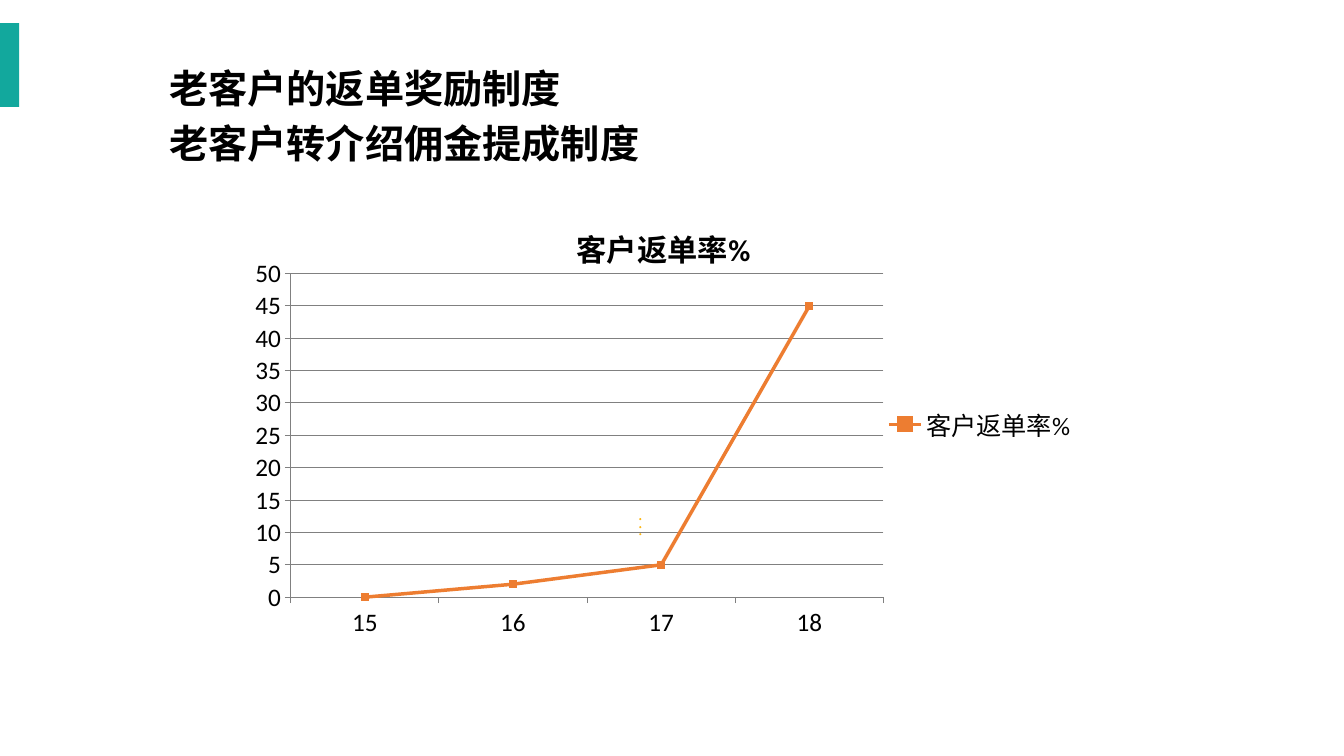
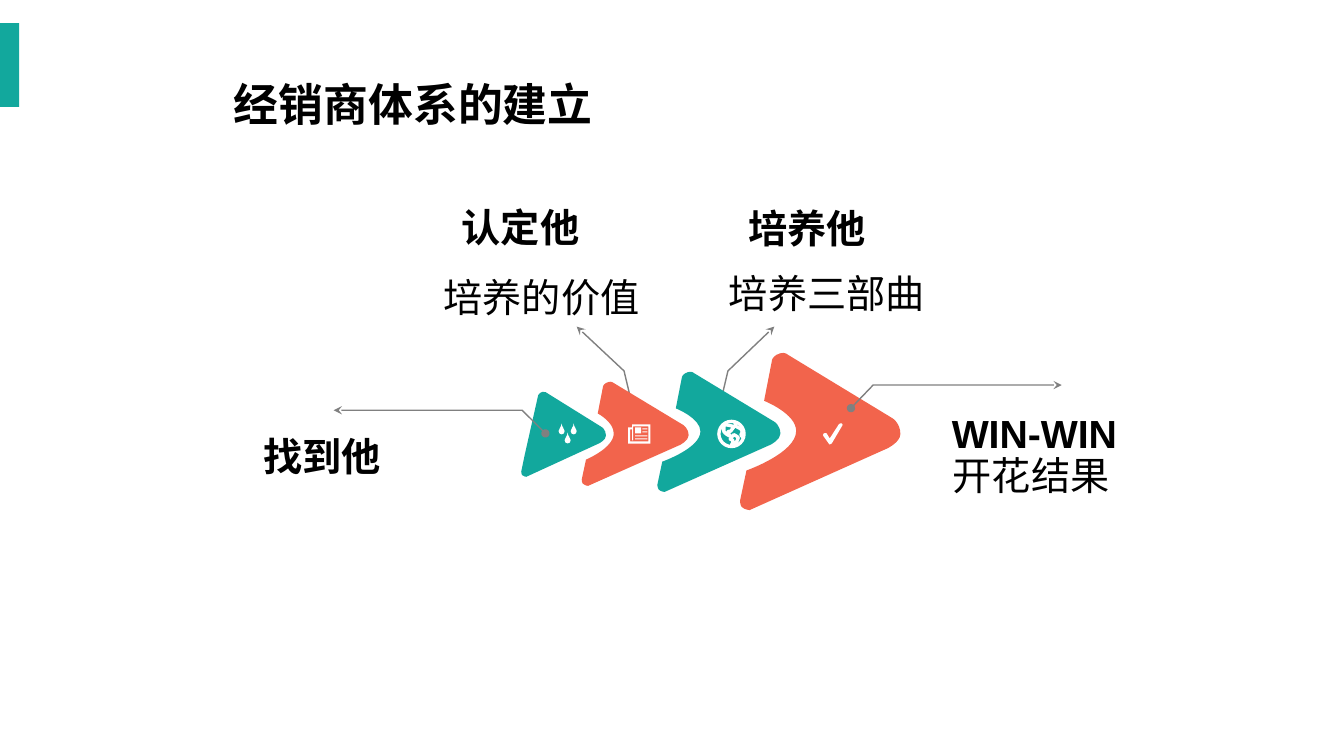
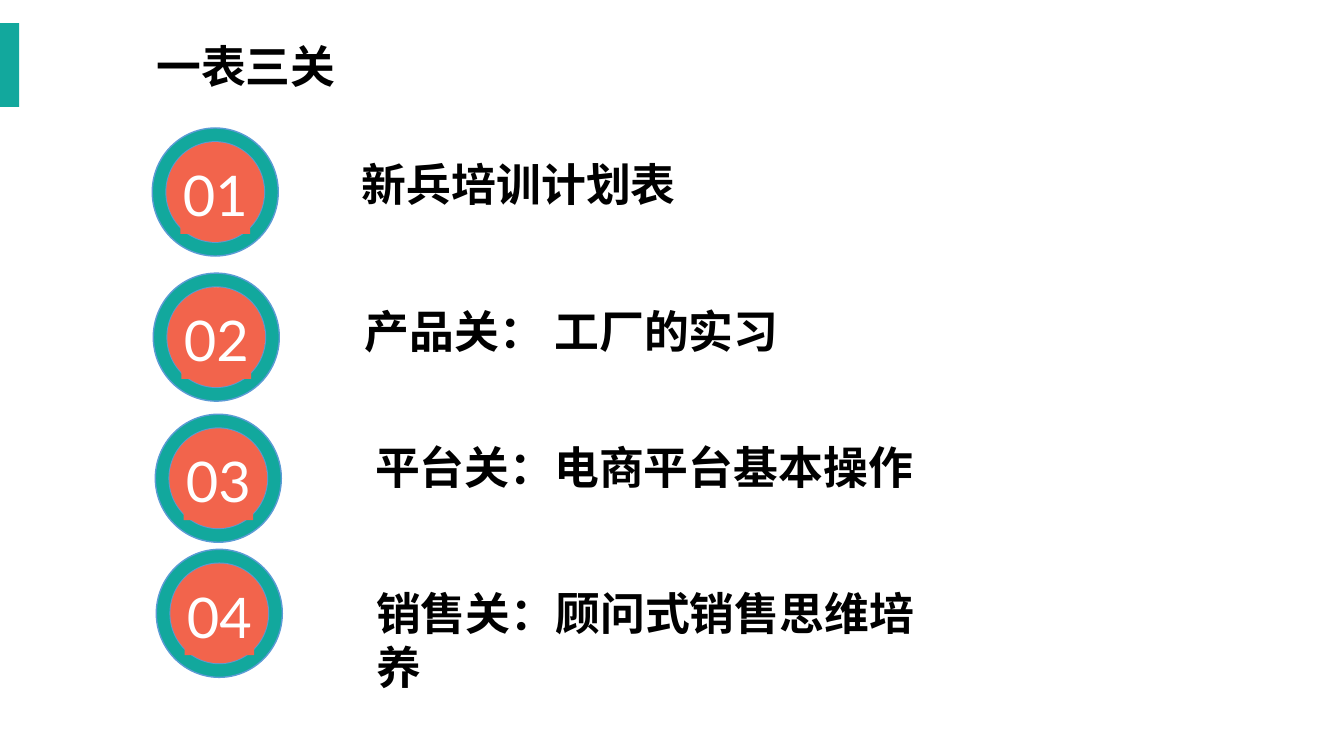
import pptx
import pptx.chart.data
import pptx.dml.color
import pptx.enum.chart
import pptx.enum.shapes
import pptx.enum.text
import pptx.oxml
import pptx.oxml.ns
import pptx.util

RGBColor = pptx.dml.color.RGBColor
TEAL = RGBColor(0x12, 0xA8, 0x9D)
CORAL = RGBColor(0xF2, 0x64, 0x4C)
YELLOW = RGBColor(0xFD, 0xB8, 0x17)
ORANGE = RGBColor(0xED, 0x7D, 0x31)
BLUE = RGBColor(0x5B, 0x9B, 0xD5)
GRAY = RGBColor(0x80, 0x80, 0x80)
BLACK = RGBColor(0, 0, 0)
WHITE = RGBColor(0xFF, 0xFF, 0xFF)

COLUMNS, ROWS = 13.33, 7.5
MODULE = pptx.util.Inches(1)
PRESET = pptx.enum.shapes.MSO_SHAPE

DROP = [
    (0.5, 0), ((0.5, 0.36), (0, 0.45), (0, 0.7)), ((0, 0.87), (0.2, 1), (0.5, 1)),
    ((0.8, 1), (1, 0.87), (1, 0.7)), ((1, 0.45), (0.5, 0.36), (0.5, 0)),
]
CHECK = [
    (8.23, 4.41), (8.22, 4.4), (8.17, 4.33),
    ((8.16, 4.32), (8.16, 4.31), (8.17, 4.3)), ((8.18, 4.29), (8.19, 4.3), (8.2, 4.3)),
    (8.23, 4.35), (8.32, 4.21),
    ((8.32, 4.2), (8.34, 4.2), (8.35, 4.2)), ((8.36, 4.21), (8.36, 4.22), (8.35, 4.23)),
    (8.25, 4.4),
]
NEWSPAPER = [
    [(6.27, 4.21), (6.45, 4.21), (6.45, 4.4), (6.23, 4.4), (6.23, 4.24), (6.27, 4.24)],
    [(6.43, 4.38), (6.25, 4.38), (6.25, 4.26), (6.27, 4.26), (6.27, 4.37), (6.28, 4.37),
     (6.28, 4.23), (6.43, 4.23)],
]
NEWSPAPER_BLOCKS = [
    (6.3, 4.24, 0.06, 0.06), (6.37, 4.25, 0.05, 0.01), (6.37, 4.28, 0.05, 0.01),
    (6.3, 4.32, 0.12, 0.01), (6.3, 4.35, 0.12, 0.01),
]
WEST_LAND = [
    (7.18, 4.26), ((7.17, 4.27), (7.18, 4.29), (7.21, 4.31)),
    ((7.24, 4.33), (7.24, 4.32), (7.24, 4.33)), ((7.25, 4.33), (7.24, 4.33), (7.24, 4.32)),
    (7.23, 4.31), (7.23, 4.3), (7.22, 4.3), ((7.21, 4.29), (7.22, 4.28), (7.23, 4.28)),
    ((7.25, 4.29), (7.25, 4.27), (7.26, 4.26)), ((7.3, 4.23), (7.25, 4.22), (7.23, 4.22)),
    ((7.2, 4.21), (7.17, 4.22), (7.18, 4.23)),
]
SOUTH_LAND = [
    (7.25, 4.35), ((7.25, 4.36), (7.23, 4.35), (7.25, 4.36)),
    ((7.27, 4.38), (7.27, 4.35), (7.27, 4.38)), ((7.27, 4.41), (7.24, 4.42), (7.26, 4.41)),
    ((7.28, 4.4), (7.28, 4.41), (7.3, 4.39)), ((7.31, 4.37), (7.32, 4.37), (7.32, 4.35)),
    ((7.33, 4.34), (7.32, 4.34), (7.31, 4.33)), ((7.3, 4.33), (7.28, 4.3), (7.27, 4.32)),
]
EAST_LAND = [
    (7.29, 4.19), ((7.29, 4.19), (7.29, 4.22), (7.3, 4.23)),
    ((7.31, 4.24), (7.35, 4.25), (7.35, 4.26)), ((7.35, 4.27), (7.37, 4.28), (7.36, 4.29)),
    ((7.35, 4.31), (7.34, 4.32), (7.36, 4.33)), (7.37, 4.34),
]


def grid(*amounts):
    """Turn grid columns or rows into lengths."""
    return [pptx.util.Emu(round(amount * MODULE)) for amount in amounts]


def paint(shape, fill=None, line=None, width=1):
    """Give a shape its fill and line, without a shadow."""
    shape.shadow.inherit = False
    if fill is None:
        shape.fill.background()
    else:
        shape.fill.solid()
        shape.fill.fore_color.rgb = fill
    if line is None:
        shape.line.fill.background()
    else:
        shape.line.color.rgb = line
        shape.line.width = pptx.util.Pt(width)
    return shape


def add_preset(slide, preset, box, fill=None, line=None, width=1):
    """Add a painted preset shape."""
    return paint(slide.shapes.add_shape(preset, *grid(*box)), fill, line, width)


def fit(contour, box):
    """Scale a contour given in shares of a box to grid units."""
    left, top, width, height = box

    def place(point):
        return left + point[0] * width, top + point[1] * height

    return [place(segment) if len(segment) == 2 else tuple(map(place, segment))
            for segment in contour]


def bend_curves(shape, contours, close):
    """Join the three vertices of each curve into one cubic segment."""
    outline = shape.element.xpath(".//a:path")[0]
    steps = iter(list(outline))
    for contour in contours:
        next(steps)
        for segment in contour[1:]:
            vertices = [next(steps) for _ in range(1 if len(segment) == 2 else 3)]
            if len(vertices) == 1:
                continue
            curve = pptx.oxml.parse_xml(f'<a:cubicBezTo {pptx.oxml.ns.nsdecls("a")}/>')
            vertices[0].addprevious(curve)
            for vertex in vertices:
                curve.append(vertex[0])
                outline.remove(vertex)
        if close:
            next(steps)


def add_outline(slide, contours, fill=None, line=None, width=1, close=True):
    """Add one freeform of contours made of corners and cubic curves."""
    builder = None
    for start, *segments in contours:
        if builder is None:
            builder = slide.shapes.build_freeform(*grid(*start))
        else:
            builder.move_to(*grid(*start))
        points = []
        for segment in segments:
            points.extend([segment] if len(segment) == 2 else segment)
        builder.add_line_segments([grid(*point) for point in points], close=close)
    shape = builder.convert_to_shape()
    bend_curves(shape, contours, close)
    return paint(shape, fill, line, width)


def add_callout(slide, points):
    """Add a bent gray line from a dot to an arrowhead."""
    shape = add_outline(slide, [points], line=GRAY, close=False)
    line = shape.element.spPr.get_or_add_ln()
    for tag, kind in (("headEnd", "oval"), ("tailEnd", "stealth")):
        line.append(pptx.oxml.parse_xml(
            f'<a:{tag} {pptx.oxml.ns.nsdecls("a")} type="{kind}"/>'))


def add_text(slide, box, lines, size=28, bold=True):
    """Add a black text box without margins."""
    frame = slide.shapes.add_textbox(*grid(*box)).text_frame
    frame.word_wrap = True
    frame.margin_left = frame.margin_right = frame.margin_top = frame.margin_bottom = 0
    frame.text = "\n".join(lines)
    for index, paragraph in enumerate(frame.paragraphs):
        font = paragraph.font
        font.name, font.size, font.bold = "Arial", pptx.util.Pt(size), bold
        font.color.rgb = BLACK
        if index:
            paragraph.space_before = pptx.util.Pt(0.2 * size)


def add_side_tab(slide):
    """Add the teal tab at the left edge."""
    add_preset(slide, PRESET.RECTANGLE, (0, 0.23, 0.19, 0.83), TEAL)


def add_play_arrow(slide, box, fill, notch):
    """Add a rounded arrowhead whose back is notched to a share of its width."""
    back = [(0.04, 0.75)]
    if notch:
        back += [((0.04, 0.75), (notch, 0.64), (notch, 0.5)),
                 ((notch, 0.39), (0.15, 0.31), (0.15, 0.31))]
    contour = [
        (1, 0.52), ((1, 0.57), (0.92, 0.61), (0.92, 0.61)),
        (0.06, 1), ((0.06, 1), (0.03, 1), (0.01, 0.98)), ((0, 0.97), (0, 0.94), (0, 0.94)),
        *back,
        (0.2, 0.05), ((0.2, 0.05), (0.21, 0.02), (0.25, 0.01)),
        ((0.28, 0), (0.3, 0.02), (0.3, 0.02)),
        (0.95, 0.42), ((0.95, 0.42), (1, 0.45), (1, 0.52)),
    ]
    add_outline(slide, [fit(contour, box)], fill)


def add_number_badge(slide, left, top, number):
    """Add a ringed disc with a number."""
    ring = add_preset(slide, PRESET.DONUT, (left, top, 1.25, 1.27), TEAL, BLUE)
    ring.adjustments[0] = 0.11
    add_preset(slide, PRESET.OVAL, (left + 0.14, top + 0.14, 0.97, 0.99), CORAL)
    label = add_preset(slide, PRESET.RECTANGLE, (left + 0.28, top + 0.35, 0.69, 0.7), CORAL)
    frame = label.text_frame
    frame.margin_left = frame.margin_right = frame.margin_top = frame.margin_bottom = 0
    frame.vertical_anchor = pptx.enum.text.MSO_ANCHOR.MIDDLE
    frame.text = f"{number:02d}"
    paragraph = frame.paragraphs[0]
    paragraph.alignment = pptx.enum.text.PP_ALIGN.CENTER
    paragraph.line_spacing = 0.9
    paragraph.font.name, paragraph.font.size = "Lato", pptx.util.Pt(40)
    paragraph.font.color.rgb = WHITE


def place_plot(chart, left, top, width, height):
    """Place the inner plot area by shares of the chart."""
    plot_area = chart.element.xpath("//c:plotArea")[0]
    for layout in plot_area.findall(pptx.oxml.ns.qn("c:layout")):
        plot_area.remove(layout)
    settings = {"layoutTarget": "inner", "xMode": "edge", "yMode": "edge",
                "x": left, "y": top, "w": width, "h": height}
    values = "".join(f'<c:{tag} val="{value}"/>' for tag, value in settings.items())
    plot_area.insert(0, pptx.oxml.parse_xml(
        f'<c:layout {pptx.oxml.ns.nsdecls("c")}><c:manualLayout>{values}'
        '</c:manualLayout></c:layout>'))


def add_rate_chart(slide, box, name, categories, values):
    """Add a line chart with markers, a title and a legend."""
    data = pptx.chart.data.CategoryChartData()
    data.categories = categories
    data.add_series(name, values)
    kinds = pptx.enum.chart
    chart = slide.shapes.add_chart(
        kinds.XL_CHART_TYPE.LINE_MARKERS, *grid(*box), data).chart
    chart.font.name, chart.font.size = "Calibri", pptx.util.Pt(18)
    chart.font.color.rgb = BLACK

    chart.has_title = True
    chart.chart_title.text_frame.text = name
    font = chart.chart_title.text_frame.paragraphs[0].font
    font.name, font.size, font.bold = "Calibri", pptx.util.Pt(21.6), True
    font.color.rgb = BLACK

    chart.has_legend = True
    chart.legend.position = kinds.XL_LEGEND_POSITION.RIGHT
    chart.legend.include_in_layout = False

    for axis in (chart.category_axis, chart.value_axis):
        axis.major_tick_mark = kinds.XL_TICK_MARK.OUTSIDE
        axis.minor_tick_mark = kinds.XL_TICK_MARK.NONE
        axis.format.line.color.rgb = GRAY
    chart.value_axis.has_major_gridlines = True
    chart.value_axis.major_gridlines.format.line.color.rgb = GRAY

    chart.plots[0].vary_by_categories = False
    series = chart.plots[0].series[0]
    series.smooth = False
    series.format.line.color.rgb = ORANGE
    series.format.line.width = pptx.util.Pt(2.5)
    series.marker.style = kinds.XL_MARKER_STYLE.SQUARE
    series.marker.size = 5
    series.marker.format.fill.solid()
    series.marker.format.fill.fore_color.rgb = ORANGE
    series.marker.format.line.color.rgb = ORANGE
    place_plot(chart, 0.06, 0.16, 0.7, 0.73)


def build_reward_slide(slide):
    """Build the slide on repeat orders."""
    for top in (5.29, 5.22, 5.14):
        add_preset(slide, PRESET.OVAL, (6.34, top, 0.02, 0.02), YELLOW)
    add_text(slide, (1.68, 0.64, 5.85, 1.06),
             ["老客户的返单奖励制度", "老客户转介绍佣金提成制度"])
    add_side_tab(slide)
    add_rate_chart(slide, (2.38, 2.01, 8.4, 4.4), "客户返单率%",
                   ["15", "16", "17", "18"], [0, 2, 5, 45])


def add_step_icons(slide):
    """Add the white icons of the four steps."""
    drops = [fit(DROP, (left, top, 0.06, 0.11))
             for left, top in ((5.54, 4.2), (5.66, 4.2), (5.6, 4.29))]
    for contours in (drops, [CHECK], NEWSPAPER):
        add_outline(slide, contours, WHITE)
    for block in NEWSPAPER_BLOCKS:
        add_preset(slide, PRESET.RECTANGLE, block, WHITE)
    add_preset(slide, PRESET.OVAL, (7.13, 4.18, 0.25, 0.25), line=WHITE, width=2.38)
    for land, close in ((WEST_LAND, True), (SOUTH_LAND, True), (EAST_LAND, False)):
        add_outline(slide, [land], line=WHITE, width=2.38, close=close)


def build_dealer_slide(slide):
    """Build the slide on the dealer system."""
    add_callout(slide, [(7.13, 4.06), (7.22, 3.68), (7.68, 3.24)])
    add_callout(slide, [(6.28, 4.06), (6.19, 3.68), (5.72, 3.24)])
    for box, fill, notch in (
        ((7.34, 3.49, 1.59, 1.57), CORAL, 0.35),
        ((6.52, 3.68, 1.22, 1.2), TEAL, 0.35),
        ((5.77, 3.78, 1.06, 1.04), CORAL, 0.3),
        ((5.17, 3.88, 0.84, 0.85), TEAL, None),
    ):
        add_play_arrow(slide, box, fill, notch)
    add_callout(slide, [(8.44, 4.05), (8.66, 3.82), (10.53, 3.82)])
    add_callout(slide, [(5.41, 4.3), (5.18, 4.07), (3.31, 4.07)])
    add_step_icons(slide)
    for left, top, width, text, bold in (
        (4.58, 2.02, 1.73, "认定他", True),
        (4.4, 2.71, 2.3, "培养的价值", False),
        (7.42, 2.03, 1.74, "培养他", True),
        (7.23, 2.67, 2.36, "培养三部曲", False),
        (9.44, 4.06, 1.74, "WIN-WIN", True),
        (9.45, 4.48, 1.94, "开花结果", False),
        (2.61, 4.29, 1.73, "找到他", True),
    ):
        add_text(slide, (left, top, width, 0.47), [text], bold=bold)
    add_text(slide, (2.32, 0.76, 3.77, 0.57), ["经销商体系的建立"], 32)
    add_side_tab(slide)


def build_training_slide(slide):
    """Build the slide on the four training steps."""
    add_text(slide, (1.55, 0.38, 2.73, 0.54), ["一表三关"], 32)
    add_side_tab(slide)
    steps = (
        (1.51, 1.27, (3.59, 1.55, 3.43, 0.54), "新兵培训计划表"),
        (1.52, 2.71, (3.62, 3.01, 4.26, 0.54), "产品关： 工厂的实习"),
        (1.54, 4.11, (3.72, 4.36, 5.36, 0.54), "平台关：电商平台基本操作"),
        (1.55, 5.45, (3.73, 5.81, 5.75, 0.57), "销售关：顾问式销售思维培养"),
    )
    for number, (left, top, text_box, text) in enumerate(steps, 1):
        add_number_badge(slide, left, top, number)
        add_text(slide, text_box, [text], 32)


def main():
    """Build and save the presentation."""
    presentation = pptx.Presentation()
    presentation.slide_width, presentation.slide_height = grid(COLUMNS, ROWS)
    for build in (build_reward_slide, build_dealer_slide, build_training_slide):
        build(presentation.slides.add_slide(presentation.slide_layouts[6]))
    presentation.save("out.pptx")


if __name__ == "__main__":
    main()
